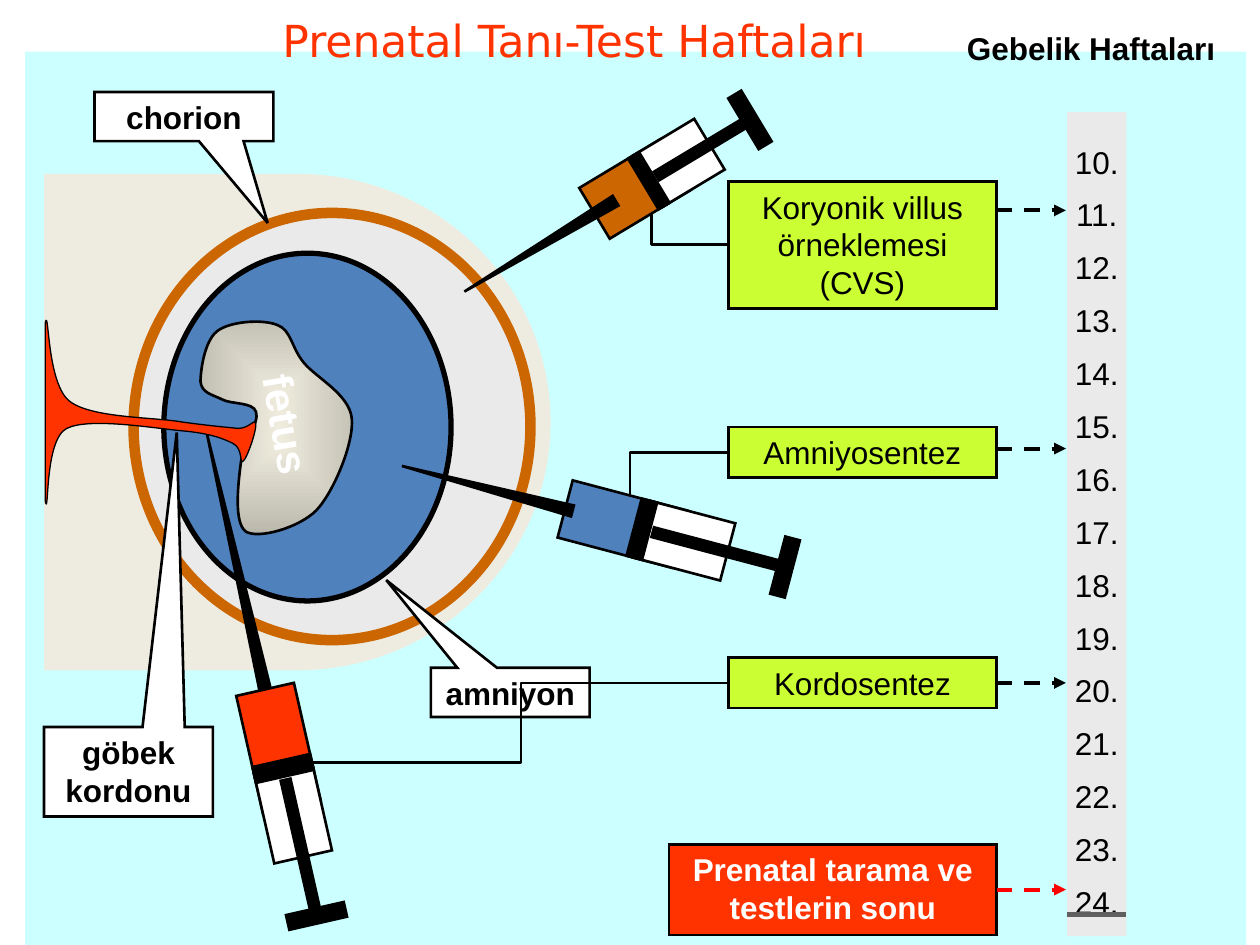
from math import cos, radians, sin

from lxml.etree import SubElement
from pptx import Presentation
from pptx.dml.color import RGBColor
from pptx.enum.dml import MSO_LINE, MSO_THEME_COLOR
from pptx.enum.shapes import MSO_CONNECTOR, MSO_SHAPE
from pptx.enum.text import MSO_ANCHOR, MSO_AUTO_SIZE, PP_ALIGN
from pptx.oxml.ns import qn
from pptx.util import Inches, Pt

COLORS = {
    "black": "000000", "white": "FFFFFF", "water": "CCFFFF", "tissue": "EEECE1",
    "grey": "EAEAEA", "dark_grey": "5F5F5F", "chorion": "CC6600",
    "fluid": "4F81BD", "blood": "FF3300", "lime": "CCFF33", "red": "FF0000",
}
# Outlines: a start point, then one point for a line or two handles and an end for a curve
FETUS = [
    [(1.24, 1.65)], [(1.24, 1.56), (1.27, 1.33), (1.37, 1.25)],
    [(1.47, 1.17), (1.73, 1.15), (1.85, 1.2)], [(1.96, 1.24), (1.96, 1.38), (2.06, 1.5)],
    [(2.16, 1.62), (2.42, 1.75), (2.44, 1.94)], [(2.46, 2.13), (2.3, 2.52), (2.16, 2.67)],
    [(2.02, 2.81), (1.7, 2.9), (1.6, 2.84)], [(1.5, 2.77), (1.54, 2.45), (1.56, 2.29)],
    [(1.58, 2.14), (1.71, 1.97), (1.68, 1.89)], [(1.66, 1.81), (1.48, 1.83), (1.41, 1.79)],
    [(1.33, 1.75), (1.25, 1.74), (1.24, 1.65)],
]
CORD = [
    [(1.68, 1.98)], [(1.67, 1.94), (1.63, 2.02), (1.54, 2.02)],
    [(1.44, 2.01), (1.32, 2), (1.1, 1.97)], [(0.88, 1.93), (0.39, 1.94), (0.21, 1.81)],
    [(0.02, 1.68), (0.04, 1.05), (0.01, 1.18)], [(0.01, 2.6)],
    [(0.04, 2.74), (0, 2.11), (0.18, 2.02)], [(0.36, 1.93), (0.88, 2.02), (1.1, 2.04)],
    [(1.32, 2.06), (1.42, 2.1), (1.5, 2.14)], [(1.58, 2.18), (1.55, 2.31), (1.58, 2.28)],
    [(1.61, 2.26), (1.69, 2.03), (1.68, 1.98)],
]


def color(name):
    return RGBColor.from_string(COLORS[name])


def paint(shape, fill, line=None, width=1.5):
    shape.shadow.inherit = False
    if fill:
        shape.fill.solid()
        shape.fill.fore_color.rgb = color(fill)
    if line:
        shape.line.color.rgb = color(line)
        shape.line.width = Pt(width)
        SubElement(shape._element.spPr.find(qn("a:ln")), qn("a:miter"), lim="800000")
    else:
        shape.line.fill.background()


def add_part(page, kind, box, fill, line=None, width=1.5, rotation=0):
    shape = page.shapes.add_shape(kind, *map(Inches, box))
    paint(shape, fill, line, width)
    shape.rotation = rotation
    return shape


def write(shape, lines, ink="black", bold=False, size=18, font="Arial", wrap=True,
          anchor=MSO_ANCHOR.TOP, align=PP_ALIGN.CENTER, spacing=None):
    frame = shape.text_frame
    frame.auto_size = MSO_AUTO_SIZE.NONE
    frame.word_wrap = wrap
    frame.vertical_anchor = anchor
    for index, line in enumerate(lines):
        para = frame.add_paragraph() if index else frame.paragraphs[0]
        para.alignment = align
        para.line_spacing = spacing
        span = para.add_run()
        span.text = line
        span.font.name, span.font.size, span.font.bold = font, Pt(size), bold
        span.font.color.rgb = color(ink)


def add_line(page, start, end, ink="black", width=1.5, kind=MSO_CONNECTOR.STRAIGHT):
    line = page.shapes.add_connector(kind, *map(Inches, (*start, *end)))
    line.line.color.rgb = color(ink)
    line.line.width = Pt(width)
    SubElement(line._element.spPr, qn("a:effectLst"))
    return line


def add_outline(page, outline, left, top, rotation=0, center=(0, 0)):
    """Draw lines and curves; a rotated shape stores its points turned back about the center."""
    c, s = cos(radians(rotation)), sin(radians(rotation))
    points = []
    for x, y in sum(outline, []):
        dx, dy = x - center[0], y - center[1]
        points.append((Inches(left + center[0] + dx * c + dy * s),
                       Inches(top + center[1] - dx * s + dy * c)))
    builder = page.shapes.build_freeform(*points[0])
    builder.add_line_segments(points[1:], close=True)
    shape = builder.convert_to_shape()
    shape.rotation = rotation

    steps = iter(list(shape._element.iter(qn("a:lnTo"))))
    for segment in outline[1:]:
        parts = [next(steps) for _ in segment]
        if len(parts) == 3:
            curve = parts[0].makeelement(qn("a:cubicBezTo"))
            parts[0].addprevious(curve)
            for part in parts:
                curve.append(part[0])
                part.getparent().remove(part)
    return shape


def add_embryo(page, left, top):
    add_part(page, MSO_SHAPE.FLOWCHART_DELAY, (left, top, 4.02, 3.94), "tissue")
    add_part(page, MSO_SHAPE.OVAL, (left + 0.71, top + 0.31, 3.15, 3.39), "grey", "chorion", 6)
    add_part(page, MSO_SHAPE.OVAL, (left + 0.95, top + 0.63, 2.28, 2.76), "fluid", "black", 3)

    fetus = add_outline(page, FETUS, left, top, 343.3, (1.87, 1.96))
    paint(fetus, None, "black")
    fetus.fill.gradient()
    for stop in fetus.fill.gradient_stops:
        stop.color.theme_color = MSO_THEME_COLOR.BACKGROUND_2
    gradient = fetus._element.spPr.find(qn("a:gradFill"))
    outer = list(gradient.iter(qn("a:schemeClr")))[-1]
    SubElement(outer, qn("a:shade"), val="46275")
    gradient.remove(gradient.find(qn("a:lin")))
    shade = SubElement(gradient, qn("a:path"), path="rect")
    SubElement(shade, qn("a:fillToRect"), dict.fromkeys("ltrb", "50000"))

    paint(add_outline(page, CORD, left, top), "blood", "black", 0.75)
    name = page.shapes.add_textbox(*map(Inches, (left + 1.42, top + 1.74, 1.01, 0.51)))
    name.rotation = 80.1
    write(name, ["fetus"], "white", True, 24, wrap=False, align=PP_ALIGN.LEFT)


def add_syringe(page, center, length, angle, fill, needle, reach):
    """Line up the parts on one axis through the center of the filled barrel."""
    def along(distance, width, height, fill, kind=MSO_SHAPE.RECTANGLE, turn=0):
        x = center[0] + distance * cos(radians(angle))
        y = center[1] + distance * sin(radians(angle))
        add_part(page, kind, (x - width / 2, y - height / 2, width, height),
                 fill, "black", rotation=(angle + turn) % 360)

    along(0, length, 0.47, fill)
    along(0.54 * length, 0.76 * length, 0.47, "white")
    along(-reach, 0.09, needle, "black", MSO_SHAPE.ISOSCELES_TRIANGLE, -90)
    along(0.17 * length, 0.135 * length, 0.47, "black")
    along(0.83 * length, 1.13 * length, 0.08, "black")
    along(1.42 * length, 0.12, 0.47, "black")


def add_callout(page, box, pointer, text):
    callout = add_part(page, MSO_SHAPE.RECTANGULAR_CALLOUT, box, "white", "black")
    callout.adjustments[0], callout.adjustments[1] = pointer
    write(callout, [text], bold=True)


def add_test(page, box, text, week_y, fill="lime", ink="black", arrow_ink="black", bold=False):
    """A test label with a dashed arrow to its week on the ruler."""
    left, top, width, height = box
    label = add_part(page, MSO_SHAPE.RECTANGLE, box, fill, "black")
    write(label, [text], ink, bold)
    arrow = add_line(page, (left + width, week_y), (8.46, week_y), arrow_ink, 2.25)
    arrow.line.dash_style = MSO_LINE.DASH
    SubElement(arrow._element.spPr.find(qn("a:ln")), qn("a:tailEnd"), type="triangle")
    if abs(top + height / 2 - week_y) < 0.01:
        arrow.begin_connect(label, 3)


def add_link(page, start, end, single_bend=True):
    link = add_line(page, start, end, kind=MSO_CONNECTOR.ELBOW)
    if single_bend:
        link._element.spPr.find(qn("a:prstGeom")).set("prst", "bentConnector2")


def add_week_ruler(page, left, top, width, height):
    ruler = add_part(page, MSO_SHAPE.RECTANGLE, (left, top, width, height), "grey")
    write(ruler, [f"{week}." for week in range(10, 25)], wrap=False,
          anchor=MSO_ANCHOR.MIDDLE, spacing=1.4)
    add_line(page, (left, top + 6.37), (left + width, top + 6.37), "dark_grey", 3)
    heading = page.shapes.add_textbox(*map(Inches, (left - 1.03, top - 0.71, 2.44, 0.4)))
    write(heading, ["Gebelik Haftaları"], bold=True)


def add_title(page, box):
    title = page.shapes.title
    title.left, title.top, title.width, title.height = map(Inches, box)
    write(title, ["Prenatal Tanı-Test Haftaları"], "blood", size=25.2, font="DejaVu Sans",
          anchor=MSO_ANCHOR.MIDDLE)
    page.shapes._spTree.append(title._element)


def main():
    deck = Presentation()
    deck.slide_width, deck.slide_height = Inches(10), Inches(7.5)
    page = deck.slides.add_slide(deck.slide_layouts[5])
    add_part(page, MSO_SHAPE.RECTANGLE, (0.2, 0.41, 9.69, 7.09), "water")
    add_embryo(page, 0.35, 1.38)
    add_syringe(page, (5.04, 1.5), 0.75, -31, "chorion", 1.4, 0.88)
    add_syringe(page, (4.94, 4.16), 0.94, 14.8, "fluid", 1.4, 1.11)
    add_syringe(page, (2.21, 5.94), 0.96, 77.2, "blood", 2.07, 1.52)
    add_callout(page, (0.75, 0.73, 1.42, 0.39), (0.468, 2.165), "chorion")
    add_callout(page, (3.42, 5.3, 1.26, 0.39), (-0.781, -2.284), "amniyon")
    add_callout(page, (0.35, 5.77, 1.34, 0.71), (0.286, -3.794), "göbek kordonu")
    add_week_ruler(page, 8.47, 0.89, 0.47, 6.54)
    add_test(page, (5.78, 1.44, 2.13, 1.01), "Koryonik villus örneklemesi (CVS)", 1.67)
    add_test(page, (5.78, 3.39, 2.13, 0.4), "Amniyosentez", 3.56)
    add_test(page, (5.78, 5.22, 2.13, 0.4), "Kordosentez", 5.42)
    add_test(page, (5.31, 6.7, 2.6, 0.72), "Prenatal tarama ve testlerin sonu", 7.06,
             "blood", "white", "red", True)
    add_link(page, (5.79, 1.94), (5.17, 1.7))
    add_link(page, (5.79, 3.59), (5, 3.93))
    add_link(page, (5.79, 5.42), (2.48, 6.05), single_bend=False)
    add_title(page, (0.93, 0.05, 7.26, 0.53))
    deck.save("out.pptx")


if __name__ == "__main__":
    main()
